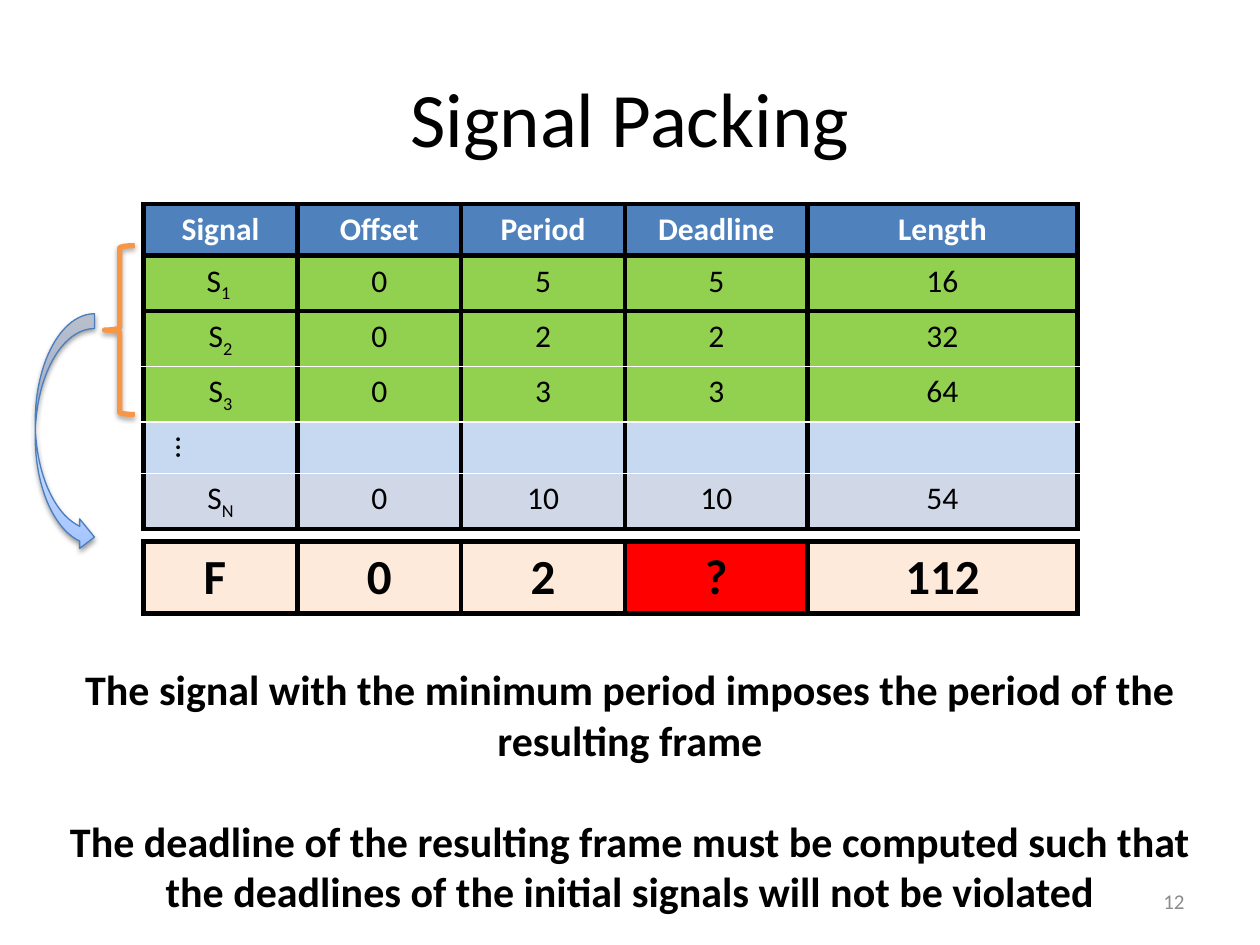
from copy import deepcopy

from lxml import etree
from pptx import Presentation
from pptx.dml.color import RGBColor
from pptx.enum import shapes, text
from pptx.oxml import ns
from pptx.util import Inches, Pt

FONT = "Calibri"
BLACK = RGBColor(0x00, 0x00, 0x00)
WHITE = RGBColor(0xFF, 0xFF, 0xFF)
GREY = RGBColor(0x8C, 0x8C, 0x8C)
HEADER_BLUE = RGBColor(0x4F, 0x81, 0xBD)
PACKED_GREEN = RGBColor(0x92, 0xD0, 0x50)
GAP_BLUE = RGBColor(0xC6, 0xD9, 0xF1)
LAST_BLUE = RGBColor(0xD0, 0xD8, 0xE8)
FRAME_PEACH = RGBColor(0xFD, 0xEA, 0xDA)
UNKNOWN_RED = RGBColor(0xFF, 0x00, 0x00)
BRACE_ORANGE = RGBColor(0xF7, 0x96, 0x46)
ARROW_LINE = RGBColor(0x4B, 0x7E, 0xBC)
ARROW_STOPS = [(0, RGBColor(0xA4, 0xC4, 0xFF)), (0.35, RGBColor(0xBF, 0xD4, 0xFF)),
               (1, RGBColor(0xE6, 0xEE, 0xFF))]

COLUMNS = [1.22, 1.3, 1.3, 1.45, 2.14]
THICK, THIN = (BLACK, 3), (WHITE, 1)

# Each row: height, fill, line above, line below, cells (text, subscript)
SIGNAL_ROWS = [
    (0.41, HEADER_BLUE, THICK, THICK, ["Signal", "Offset", "Period", "Deadline", "Length"]),
    (0.44, PACKED_GREEN, THICK, THICK, [("S", "1 "), "0", "5", "5", "16"]),
    (0.44, PACKED_GREEN, THICK, THIN, [("S", "2"), "0", "2", "2", "32"]),
    (0.44, PACKED_GREEN, THIN, THIN, [("S", "3"), "0", "3", "3", "64"]),
    (0.41, GAP_BLUE, THIN, THIN, ["…", "", "", "", ""]),
    (0.44, LAST_BLUE, THIN, THICK, [("S", "N"), "0", "10", "10", "54"]),
]
FRAME_ROWS = [(0.57, FRAME_PEACH, THICK, THICK, ["F ", "0", "2", "?", "112"])]
NOTES = [
    "The signal with the minimum period imposes the period of the resulting frame",
    "The deadline of the resulting frame must be computed such that "
    "the deadlines of the initial signals will not be violated",
]


def inches(box):
    return [Inches(value) for value in box]


def add_span(para, words, size, color=BLACK, bold=False, align=text.PP_ALIGN.CENTER):
    para.alignment = align
    span = para.add_run()
    span.text = words
    font = span.font
    font.name, font.size, font.bold = FONT, Pt(size), bold
    font.color.rgb = color
    return span


def set_borders(cell, above, below):
    properties = cell._tc.get_or_add_tcPr()
    for side, (color, width) in zip("LRTB", (THICK, THICK, above, below)):
        line = etree.SubElement(properties, ns.qn(f"a:ln{side}"), w=str(Pt(width)))
        fill = etree.SubElement(line, ns.qn("a:solidFill"))
        etree.SubElement(fill, ns.qn("a:srgbClr"), val=str(color))


def add_shadow(shape, opacity, distance):
    shape.shadow.inherit = False
    effects = shape._element.spPr.find(ns.qn("a:effectLst"))
    shadow = etree.SubElement(effects, ns.qn("a:outerShdw"), blurRad=str(Pt(3.1)),
                              dist=str(Pt(distance)), dir="5400000", rotWithShape="0")
    color = etree.SubElement(shadow, ns.qn("a:srgbClr"), val=str(BLACK))
    etree.SubElement(color, ns.qn("a:alpha"), val=str(opacity * 1000))


def add_title(page, box):
    title = page.shapes.title
    title.left, title.top, title.width, title.height = inches(box)
    title.text_frame.vertical_anchor = text.MSO_ANCHOR.MIDDLE
    add_span(title.text_frame.paragraphs[0], "Signal Packing", 44)


def add_signal_table(page, box, rows, size, bold=False):
    table = page.shapes.add_table(len(rows), len(COLUMNS), *inches(box)).table
    for column, width in zip(table.columns, COLUMNS):
        column.width = Inches(width)
    for r, (height, fill, above, below, entries) in enumerate(rows):
        table.rows[r].height = Inches(height)
        header = fill == HEADER_BLUE
        for c, entry in enumerate(entries):
            cell = table.cell(r, c)
            set_borders(cell, above, below)
            cell.fill.solid()
            cell.fill.fore_color.rgb = UNKNOWN_RED if entry == "?" else fill
            para = cell.text_frame.paragraphs[0]
            para.font.size = Pt(size)
            if entry == "…":
                cell._tc.get_or_add_tcPr().set("vert", "vert270")
            words, subscript = entry if isinstance(entry, tuple) else (entry, "")
            if words:
                add_span(para, words, size, WHITE if header else BLACK, bold or header)
            if subscript:
                span = add_span(para, subscript, size)
                span.font._element.set("baseline", "-25000")


def add_notes(page, box):
    frame = page.shapes.add_textbox(*inches(box)).text_frame
    frame.word_wrap = True
    for i, words in enumerate(NOTES):
        para = frame.add_paragraph() if i else frame.paragraphs[0]
        para.space_before = Pt(29 * i)
        add_span(para, words, 24, bold=True)


def add_page_number(page, box):
    frame = page.shapes.add_textbox(*inches(box)).text_frame
    frame.word_wrap = True
    frame.vertical_anchor = text.MSO_ANCHOR.MIDDLE
    add_span(frame.paragraphs[0], "12", 12, GREY, align=text.PP_ALIGN.RIGHT)


def add_packing_arrow(page, box):
    arrow = page.shapes.add_shape(shapes.MSO_SHAPE.CURVED_RIGHT_ARROW, *inches(box))
    arrow.fill.gradient()
    arrow.fill.gradient_angle = 90
    # The default gradient has two stops; a third goes between them
    first = arrow.fill.gradient_stops[0]._gs
    first.addnext(deepcopy(first))
    for stop, (position, color) in zip(arrow.fill.gradient_stops, ARROW_STOPS):
        stop.position = position
        stop.color.rgb = color
    arrow.line.color.rgb = ARROW_LINE
    arrow.line.width = Pt(0.75)
    add_shadow(arrow, 38, 1.6)


def add_brace(page, box):
    brace = page.shapes.add_shape(shapes.MSO_SHAPE.LEFT_BRACE, *inches(box))
    brace.fill.background()
    brace.line.color.rgb = BRACE_ORANGE
    brace.line.width = Pt(3)
    add_shadow(brace, 35, 1.8)


def main():
    deck = Presentation()
    deck.slide_width, deck.slide_height = Inches(10), Inches(7.5)
    page = deck.slides.add_slide(deck.slide_layouts[5])

    add_title(page, (0.5, 0.3, 9, 1.25))
    add_signal_table(page, (1.14, 1.62, 7.41, 2.58), SIGNAL_ROWS, 18)
    add_notes(page, (0.2, 5.22, 9.6, 2.12))
    add_page_number(page, (7.17, 6.95, 2.33, 0.4))
    add_packing_arrow(page, (0.28, 2.49, 0.47, 1.89))
    add_signal_table(page, (1.14, 4.3, 7.41, 0.57), FRAME_ROWS, 28, bold=True)
    add_brace(page, (0.83, 1.95, 0.24, 1.34))

    deck.save("out.pptx")


if __name__ == "__main__":
    main()
